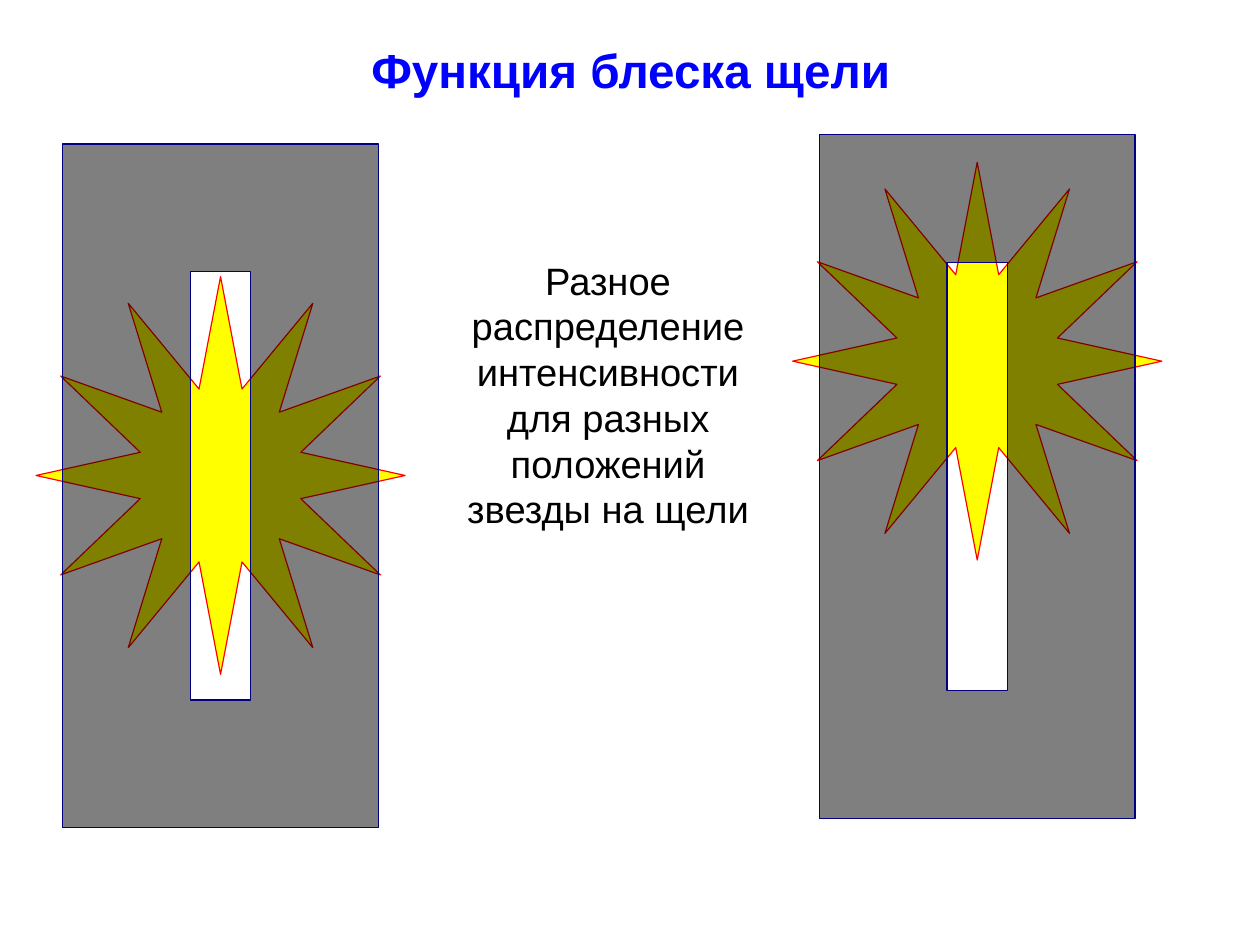
from dataclasses import dataclass
from math import cos, pi, sin

from lxml.etree import SubElement
from pptx import Presentation
from pptx.dml.color import RGBColor
from pptx.enum.shapes import MSO_SHAPE
from pptx.enum.text import PP_ALIGN
from pptx.oxml.ns import qn
from pptx.util import Inches, Pt


@dataclass(frozen=True)
class Theme:
    font: str = "Arial"
    title: RGBColor = RGBColor(0, 0, 255)
    text: RGBColor = RGBColor(0, 0, 0)
    star: RGBColor = RGBColor(255, 255, 0)
    edge: RGBColor = RGBColor(255, 0, 0)
    mask: RGBColor = RGBColor(0, 0, 0)
    rim: RGBColor = RGBColor(0, 0, 128)
    large: Pt = Pt(30)
    body: Pt = Pt(24)
    hair: Pt = Pt(0)


THEME = Theme()
CM = 1 / 2.54
RAYS = 12
INNER = 0.45
STAR_W, STAR_H = 3.23, 3.48
SLIT_W, SLIT_H = 2.76, 5.98


def paint(shape, fill, line):
    shape.shadow.inherit = False
    shape.fill.solid()
    shape.fill.fore_color.rgb = fill
    shape.line.color.rgb = line
    shape.line.width = THEME.hair


def add_text(slide, box, lines, size, color, align, bold=False):
    frame = slide.shapes.add_textbox(*map(Inches, box)).text_frame
    frame.word_wrap = True
    frame.text = "\n".join(lines)
    for para in frame.paragraphs:
        para.alignment = align
        para.font.name = THEME.font
        para.font.size = size
        para.font.bold = bold
        para.font.color.rgb = color


def add_star(slide, x, y):
    points = []
    for step in range(2 * RAYS):
        reach = INNER if step % 2 else 1
        angle = step * pi / RAYS
        points.append((Inches(x + reach * STAR_W / 2 * sin(angle)),
                       Inches(y - reach * STAR_H / 2 * cos(angle))))
    path = slide.shapes.build_freeform(*points[0])
    path.add_line_segments(points[1:], close=True)
    paint(path.convert_to_shape(), THEME.star, THEME.edge)


def add_slit(slide, left, top, drop):
    add_star(slide, left + SLIT_W / 2, top + drop)
    box = map(Inches, (left, top, SLIT_W, SLIT_H))
    slit = slide.shapes.add_shape(MSO_SHAPE.FRAME, *box)
    slit.adjustments[0] = 0.404
    paint(slit, THEME.mask, THEME.rim)
    color = slit.element.spPr.find(qn("a:solidFill"))[0]
    SubElement(color, qn("a:alpha"), val="50000")


def main():
    deck = Presentation()
    deck.slide_width = Inches(28 * CM)
    deck.slide_height = Inches(21 * CM)
    slide = deck.slides.add_slide(deck.slide_layouts[6])
    add_text(slide, (3.15, 0.31, 4.88, 0.56), ["Функция блеска щели"],
             THEME.large, THEME.title, PP_ALIGN.LEFT, True)
    for left, top, drop in ((0.55, 1.26, 2.9), (7.17, 1.18, 1.98)):
        add_slit(slide, left, top, drop)
    add_text(slide, (3.94, 2.2, 2.76, 2.33),
             ["Разное распределение интенсивности",
              "для разных положений звезды на щели"],
             THEME.body, THEME.text, PP_ALIGN.CENTER)
    deck.save("out.pptx")


if __name__ == "__main__":
    main()
